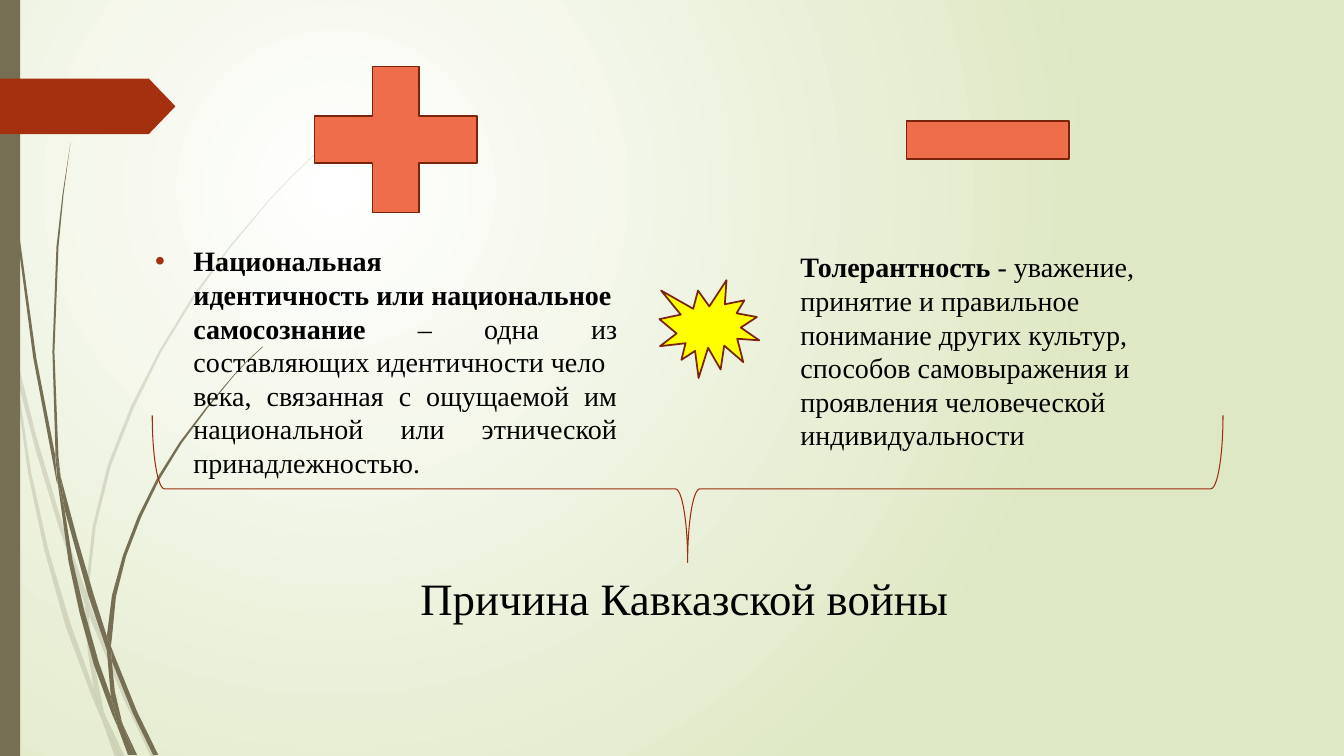
from lxml import etree
from pptx import Presentation
from pptx.dml.color import RGBColor
from pptx.enum.shapes import MSO_SHAPE as Shp
from pptx.enum.text import MSO_AUTO_SIZE as Fit, PP_ALIGN as Align
from pptx.oxml.ns import qn
from pptx.util import Inches, Pt

FONT = "Times New Roman"
NB = chr(160)  # no-break space
COL = {
    "white": "FFFFFF", "green": "DFE8C4", "olive": "766F54", "red": "A53010",
    "coral": "EE6E4B", "edge": "7A240C", "brace": "9E2E0F",
    "yellow": "FFFF00", "black": "000000",
}

# Text runs: (words, bold)
IDENT = [
    (f"Национальная идентичность{NB}или{NB}национальное самосознание ", True),
    (f"– одна из составляющих{NB}идентичности{NB}человека, связанная с "
     "ощущаемой им национальной или этнической принадлежностью.", False),
]
TOLER = [
    ("Толерантность", True),
    (f"{NB}- уважение, принятие и правильное понимание других культур, "
     "способов самовыражения и проявления человеческой индивидуальности",
     False),
]
CAUSE = [("Причина Кавказской войны", False)]

# Outlines of the grass pieces, in inches
PALE = [
    [(0.11, 3.5), (0.09, 3.22), (0, 2.82), (0, 2.99), (0.1, 3.44)],
    [(0.58, 5.22), (0.84, 5.99), (0.85, 5.86), (0.62, 5.2), (0.36, 4.33),
     (0.14, 3.45), (0.17, 3.76), (0.36, 4.49)],
    [(0.92, 6.07), (0.88, 5.96), (0.88, 6.1), (1.23, 6.94), (1.5, 7.51),
     (1.55, 7.51), (1.27, 6.92)],
    [(1.19, 7.51), (1.24, 7.51), (1.05, 7.11)],
    [(0.93, 6.83), (0.7, 6.19), (0.48, 5.45), (0.31, 4.69), (0.17, 3.76),
     (0.11, 3.5), (0.28, 4.7), (0.44, 5.46), (0.65, 6.21), (0.92, 6.93),
     (1.01, 7.14), (0.99, 7.07)],
    [(0.84, 5.99), (0.87, 6.46), (0.93, 6.83), (0.96, 6.92), (1.05, 7.11),
     (1.03, 7.06), (0.91, 6.46), (0.88, 6.1), (0.88, 6.08)],
    [(0.88, 5.84), (0.95, 5.22), (1.1, 4.62), (1.33, 4.04), (1.6, 3.49),
     (1.93, 2.95), (2.29, 2.45), (2.68, 1.98), (2.9, 1.75), (3.12, 1.54),
     (3.12, 1.53), (2.89, 1.75), (2.68, 1.97), (2.28, 2.44), (1.91, 2.94),
     (1.58, 3.48), (1.3, 4.03), (1.07, 4.61), (0.92, 5.22), (0.85, 5.84),
     (0.85, 5.86), (0.88, 5.96)],
    [(1.01, 7.14), (1.14, 7.51), (1.19, 7.51)],
    [(0.88, 6.08), (0.88, 6.1), (0.88, 5.96), (0.85, 5.86), (0.84, 5.99)],
    [(0.96, 6.92), (0.93, 6.83), (0.99, 7.07), (1.01, 7.14), (1.19, 7.51),
     (1.05, 7.11)],
]
DARK = [
    [(0.07, 1.1), (0.17, 2.33), (0.33, 3.55), (0.56, 4.77), (0.57, 4.81),
     (0.55, 4.57), (0.55, 4.53), (0.36, 3.55), (0.19, 2.32), (0.08, 1.09),
     (0.05, 0.48), (0.04, 0), (0.03, 0), (0.04, 0.48)],
    [(0.88, 5.92), (1.06, 6.45), (1.06, 6.33), (1.06, 6.31), (0.93, 5.9),
     (0.76, 5.32), (0.6, 4.72), (0.64, 5.05)],
    [(1.13, 6.49), (1.1, 6.41), (1.11, 6.56), (1.32, 7.08), (1.52, 7.49),
     (1.57, 7.49), (1.36, 7.06)],
    [(1.1, 6.91), (0.98, 6.57), (0.84, 6.07), (0.72, 5.56), (0.64, 5.05),
     (0.57, 4.77), (0.68, 5.57), (0.79, 6.08), (0.93, 6.59), (1.11, 7.08),
     (1.17, 7.22), (1.16, 7.17)],
    [(0.6, 4.72), (0.58, 4.53), (0.54, 3.49), (0.58, 2.45), (0.63, 1.93),
     (0.7, 1.41), (0.62, 1.93), (0.56, 2.45), (0.52, 3.49), (0.55, 4.49)],
    [(1.33, 7.49), (1.36, 7.49), (1.22, 7.19)],
    [(0.57, 4.77), (0.64, 5.05), (0.6, 4.72), (0.55, 4.49), (0.55, 4.53)],
    [(1.11, 6.33), (1.15, 5.92), (1.25, 5.52), (1.4, 5.13), (1.58, 4.76),
     (1.8, 4.4), (2.05, 4.06), (2.31, 3.74), (2.45, 3.59), (2.61, 3.44),
     (2.6, 3.44), (2.45, 3.58), (2.31, 3.73), (2.04, 4.05), (1.78, 4.39),
     (1.56, 4.74), (1.37, 5.12), (1.22, 5.51), (1.11, 5.91), (1.06, 6.31),
     (1.1, 6.41)],
    [(1.17, 7.22), (1.27, 7.49), (1.31, 7.49)],
    [(1.06, 6.45), (1.1, 6.91), (1.16, 7.06), (1.22, 7.19), (1.21, 7.16),
     (1.14, 6.86), (1.11, 6.56), (1.09, 6.51)],
    [(1.06, 6.45), (1.09, 6.51), (1.11, 6.56), (1.1, 6.41), (1.06, 6.31)],
    [(1.16, 7.06), (1.1, 6.91), (1.16, 7.17), (1.17, 7.22), (1.3, 7.49),
     (1.33, 7.49), (1.22, 7.19)],
]

# Signs: (preset, box, fill)
SIGNS = [
    (Shp.MATH_PLUS, (2.83, 0.4, 2.19, 1.97), "coral"),
    (Shp.MATH_MINUS, (8.7, 0.58, 2.19, 1.62), "coral"),
    (Shp.EXPLOSION1, (6.54, 2.78, 0.99, 0.97), "yellow"),
]

prs = Presentation()
prs.slide_width, prs.slide_height = Inches(13.33), Inches(7.5)
slide = prs.slides.add_slide(prs.slide_layouts[6])
shapes = slide.shapes


def rgb(name):
    return RGBColor.from_string(COL[name])


def paint(shp, fill=None, line=None, width=1.25):
    shp.shadow.inherit = False
    if fill:
        shp.fill.solid()
        shp.fill.fore_color.rgb = rgb(fill)
    else:
        shp.fill.background()
    if line:
        shp.line.color.rgb = rgb(line)
        shp.line.width = Pt(width)
    else:
        shp.line.fill.background()
    return shp


def draw(kind, box, *style):
    return paint(shapes.add_shape(kind, *map(Inches, box)), *style)


def blade(knots, alpha):
    pts = [(Inches(x), Inches(y)) for x, y in knots]
    form = shapes.build_freeform(*pts[0])
    form.add_line_segments(pts[1:], close=True)
    shp = paint(form.convert_to_shape(), "olive")
    if alpha < 100:
        tone = shp.element.spPr.find(qn("a:solidFill"))[0]
        etree.SubElement(tone, qn("a:alpha"), val=str(alpha * 1000))


def write(box, runs, size, wrap=True, fit=Fit.SHAPE_TO_FIT_TEXT):
    frame = shapes.add_textbox(*map(Inches, box)).text_frame
    frame.word_wrap = wrap
    frame.auto_size = fit
    para = frame.paragraphs[0]
    for words, bold in runs:
        run = para.add_run()
        run.text = words
        font = run.font
        font.name, font.size, font.bold = FONT, Pt(size), bold
        font.color.rgb = rgb("black")
    return para


# Background glow
back = slide.background.fill
back.gradient()
for stop, name in zip(back.gradient_stops, ("white", "green")):
    stop.color.rgb = rgb(name)
grad = slide.element.find(".//" + qn("a:gradFill"))
glow = etree.Element(qn("a:path"), path="circle")
etree.SubElement(glow, qn("a:fillToRect"),
                 l="50000", t="50000", r="100000", b="100000")
grad.replace(grad.find(qn("a:lin")), glow)

# Grass, side bar and tab
for blades, alpha in ((PALE, 20), (DARK, 100)):
    for knots in blades:
        blade(knots, alpha)
draw(Shp.RECTANGLE, (0, 0, 0.2, 7.5), "olive")
tab = draw(Shp.PENTAGON, (0, 0.78, 1.74, 0.55), "red")
tab.adjustments[0] = 0.48

# Definitions
para = write((1.44, 2.37, 4.78, 2.16), IDENT, 20, fit=Fit.NONE)
para.alignment = Align.JUSTIFY
para.space_before = Pt(10)
props = para._p.get_or_add_pPr()
props.set("marL", str(Inches(0.38)))
props.set("indent", str(-Inches(0.38)))
tint = etree.SubElement(props, qn("a:buClr"))
etree.SubElement(tint, qn("a:srgbClr"), val=COL["red"])
etree.SubElement(props, qn("a:buFont"), typeface="Arial")
etree.SubElement(props, qn("a:buChar"), char="•")
write((7.84, 2.43, 4.29, 2.12), TOLER, 20)

# Plus, minus and clash
for kind, box, fill in SIGNS:
    draw(kind, box, fill, "edge")

# Brace and cause
brace = draw(Shp.RIGHT_BRACE, (6.09, -0.46, 1.46, 10.62), None, "brace", 0.75)
brace.rotation = 90
write((4.07, 5.61, 5.49, 0.64), CAUSE, 32, False)

prs.save("out.pptx")
